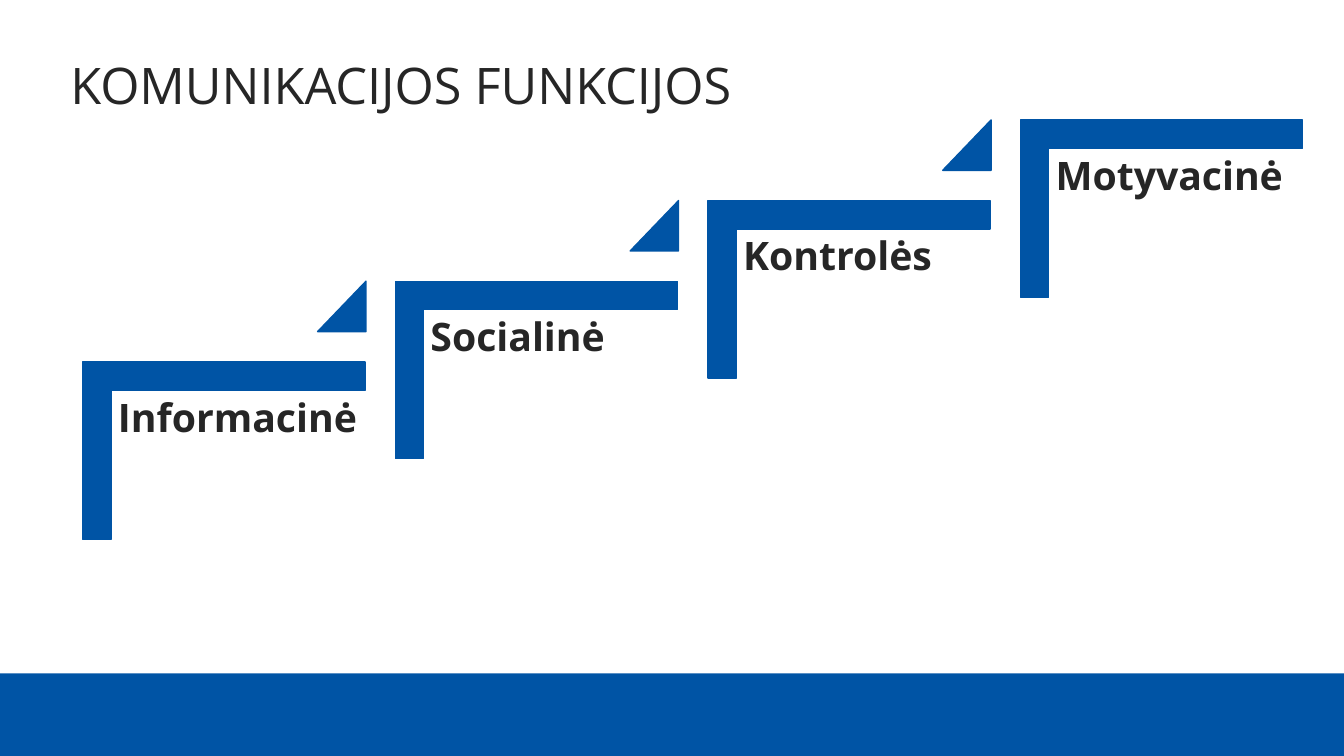
"""Build a slide with four communication functions as a rising staircase."""
from pptx import Presentation
from pptx import util as u
from pptx.dml.color import RGBColor
from pptx.enum import shapes, text

BLUE, INK = "0054A5", "262626"
WIDTH, HEIGHT = 13.33, 7.5
STEP_WIDTH, STEP_RISE = 3.1, 0.8
FUNCTIONS = ["Informacinė", "Socialinė", "Kontrolės", "Motyvacinė"]

deck = Presentation()
deck.slide_width, deck.slide_height = u.Inches(WIDTH), u.Inches(HEIGHT)
page = deck.slides.add_slide(deck.slide_layouts[6])


def add_block(kind, left, top, width, height, adjustments=(), outlined=True):
    block = page.shapes.add_shape(kind, *map(u.Inches, (left, top, width, height)))
    block.shadow.inherit = False
    for index, value in enumerate(adjustments):
        block.adjustments[index] = value
    block.fill.solid()
    block.fill.fore_color.rgb = RGBColor.from_string(BLUE)
    if outlined:
        block.line.color.rgb = RGBColor.from_string(BLUE)
        block.line.width = u.Pt(1)
    else:
        block.line.fill.background()
    return block


def add_text(words, left, top, width, height, size, bold=False,
             anchor=text.MSO_ANCHOR.TOP, inset=(0.1, 0.05)):
    box = page.shapes.add_textbox(*map(u.Inches, (left, top, width, height)))
    frame = box.text_frame
    frame.word_wrap = True
    frame.vertical_anchor = anchor
    frame.margin_left = frame.margin_right = u.Inches(inset[0])
    frame.margin_top = frame.margin_bottom = u.Inches(inset[1])
    para = frame.paragraphs[0]
    para.line_spacing = 0.9
    span = para.add_run()
    span.text = words
    span.font.name, span.font.size, span.font.bold = "Open Sans", u.Pt(size), bold
    span.font.color.rgb = RGBColor.from_string(INK)


add_block(shapes.MSO_SHAPE.RECTANGLE, 0, 6.68, WIDTH, HEIGHT - 6.68, outlined=False)

for step, name in enumerate(FUNCTIONS):
    left, rise = step * STEP_WIDTH, step * STEP_RISE
    corner = add_block(shapes.MSO_SHAPE.CORNER, 1.34 + left, 3.07 - rise,
                       1.76, 2.8, (0.16, 0.16))
    corner.rotation = 90
    add_text(name, 1.1 + left, 3.88 - rise, 2.53, 2.32, 28, bold=True, inset=(0.07, 0.07))
    if step < len(FUNCTIONS) - 1:
        add_block(shapes.MSO_SHAPE.ISOSCELES_TRIANGLE, 3.15 + left, 2.79 - rise,
                  0.48, 0.5, (1,))

add_text("KOMUNIKACIJOS FUNKCIJOS", 0.6, 0.3, 12.1, 0.89, 36, anchor=text.MSO_ANCHOR.BOTTOM)

deck.save("out.pptx")
